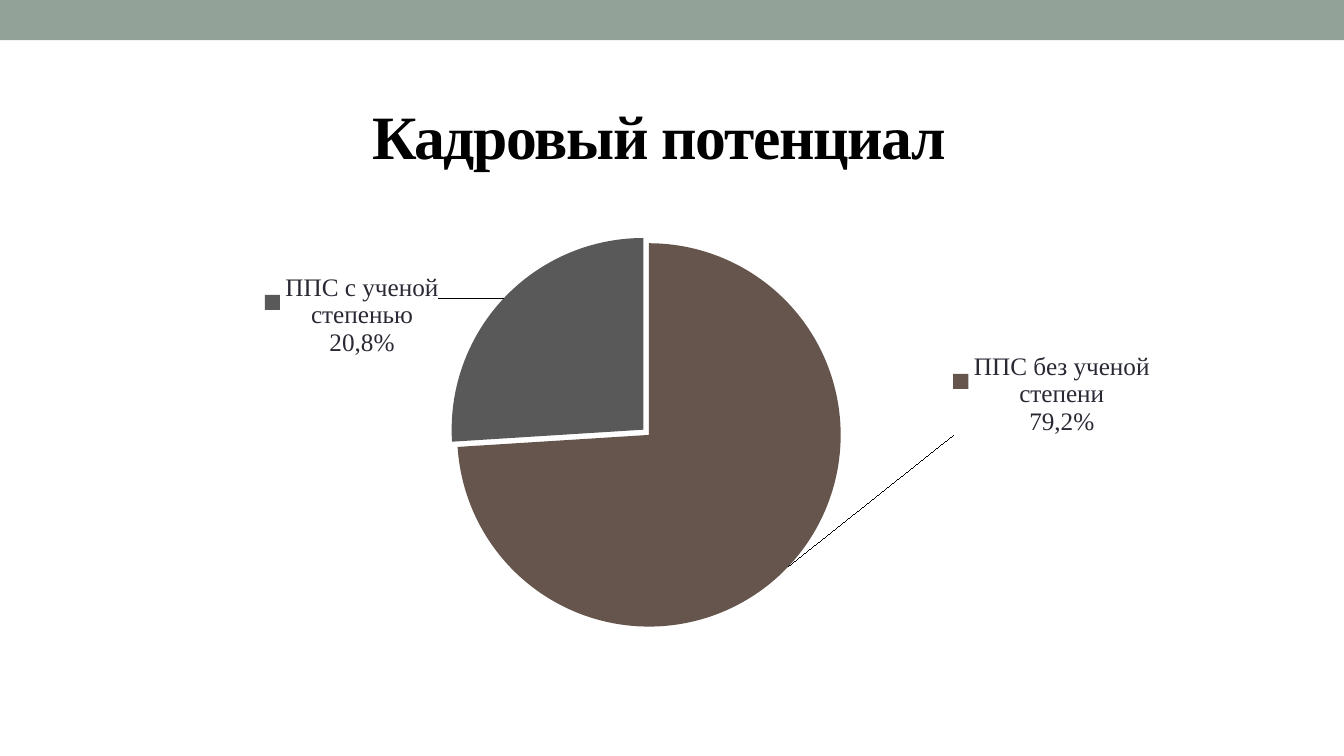
import pptx
import pptx.chart.data
import pptx.dml.color
import pptx.enum.chart
import pptx.enum.shapes
import pptx.enum.text
import pptx.oxml
import pptx.oxml.ns
import pptx.util

Inches = pptx.util.Inches
Pt = pptx.util.Pt
SERIF = "Times New Roman"
TEXT_COLOR = "292934"

# Category, value, colour, label lines, label shift as a share of the chart
SLICES = [
    ("ППС без ученой степени", 74, "66554C", "79,2%", (0.145, -0.417)),
    ("ППС с ученой степенью", 26, "595959", "20,8%", (-0.055, 0.119)),
]


def color(value):
    return pptx.dml.color.RGBColor.from_string(value)


def style_font(font, name, size, value, bold=False):
    font.name = name
    font.size = Pt(size)
    font.bold = bold
    font.color.rgb = color(value)


def chart_layout(**settings):
    """Build a manual chart layout from its element names and values."""
    parts = "".join(f'<c:{key} val="{value}"/>' for key, value in settings.items())
    return pptx.oxml.parse_xml(
        f"<c:layout {pptx.oxml.ns.nsdecls('c')}>"
        f"<c:manualLayout>{parts}</c:manualLayout></c:layout>"
    )


def add_band(page):
    band = page.shapes.add_shape(
        pptx.enum.shapes.MSO_SHAPE.RECTANGLE, 0, 0, Inches(13.33), Inches(0.4)
    )
    band.shadow.inherit = False
    band.fill.solid()
    band.fill.fore_color.rgb = color("93A299")
    band.line.fill.background()


def fill_title(page, text):
    title = page.shapes.title
    title.left, title.top = Inches(3.59), Inches(0.96)
    title.width, title.height = Inches(6.31), Inches(0.75)
    frame = title.text_frame
    frame.text = text
    frame.vertical_anchor = pptx.enum.text.MSO_ANCHOR.MIDDLE
    para = frame.paragraphs[0]
    para.alignment = pptx.enum.text.PP_ALIGN.LEFT
    span = para.runs[0]
    style_font(span.font, SERIF, 44, "000000", bold=True)
    span.font._element.set("spc", "-100")


def add_slice_label(point, lines):
    label = point.data_label
    label.text_frame.text = "\n".join(lines)
    for para in label.text_frame.paragraphs:
        for span in para.runs:
            style_font(span.font, SERIF, 18, TEXT_COLOR)
    label.position = pptx.enum.chart.XL_LABEL_POSITION.OUTSIDE_END


def add_pie(page):
    data = pptx.chart.data.CategoryChartData()
    data.categories = [name for name, *_ in SLICES]
    data.add_series("Series 1", [value for _, value, *_ in SLICES])
    chart = page.shapes.add_chart(
        pptx.enum.chart.XL_CHART_TYPE.PIE,
        Inches(1.05), Inches(1.71), Inches(10.96), Inches(5.16), data,
    ).chart
    chart.has_title = False
    chart.has_legend = False
    style_font(chart.font, "Arial", 10, TEXT_COLOR)
    plot = chart.plots[0]
    plot.vary_by_categories = True

    # Slices and their labels
    series = plot.series[0]
    for index, (name, _, fill, share, _) in enumerate(SLICES):
        point = series.points[index]
        point.format.fill.solid()
        point.format.fill.fore_color.rgb = color(fill)
        point.format.line.fill.background()
        add_slice_label(point, [name, share])
    labels = series.data_labels
    labels.show_value = False
    labels.show_category_name = True
    labels.show_percentage = True
    style_font(labels.font, SERIF, 18, TEXT_COLOR)

    # Label places and legend keys
    root = chart.element
    for label, (*_, (x, y)) in zip(root.xpath(".//c:dLbl"), SLICES):
        label.xpath("./c:idx")[0].addnext(chart_layout(x=x, y=y))
        for key, flag in (("LegendKey", 1), ("Val", 0), ("CatName", 1), ("Percent", 1)):
            label.xpath(f"./c:show{key}")[0].set("val", str(flag))

    # Pulled-out slices and the place of the pie
    root.xpath(".//c:dPt")[0].addprevious(
        pptx.oxml.parse_xml(f'<c:explosion {pptx.oxml.ns.nsdecls("c")} val="2"/>')
    )
    area = root.xpath(".//c:plotArea")[0]
    for layout in area.xpath("./c:layout"):
        area.remove(layout)
    area.insert(0, chart_layout(
        layoutTarget="inner", xMode="edge", yMode="edge",
        x=0.312, y=0.124, w=0.354, h=0.752,
    ))


def main():
    deck = pptx.Presentation()
    deck.slide_width, deck.slide_height = Inches(13.33), Inches(7.5)
    page = deck.slides.add_slide(deck.slide_layouts[5])
    add_band(page)
    fill_title(page, "Кадровый потенциал")
    add_pie(page)
    deck.save("out.pptx")


if __name__ == "__main__":
    main()
